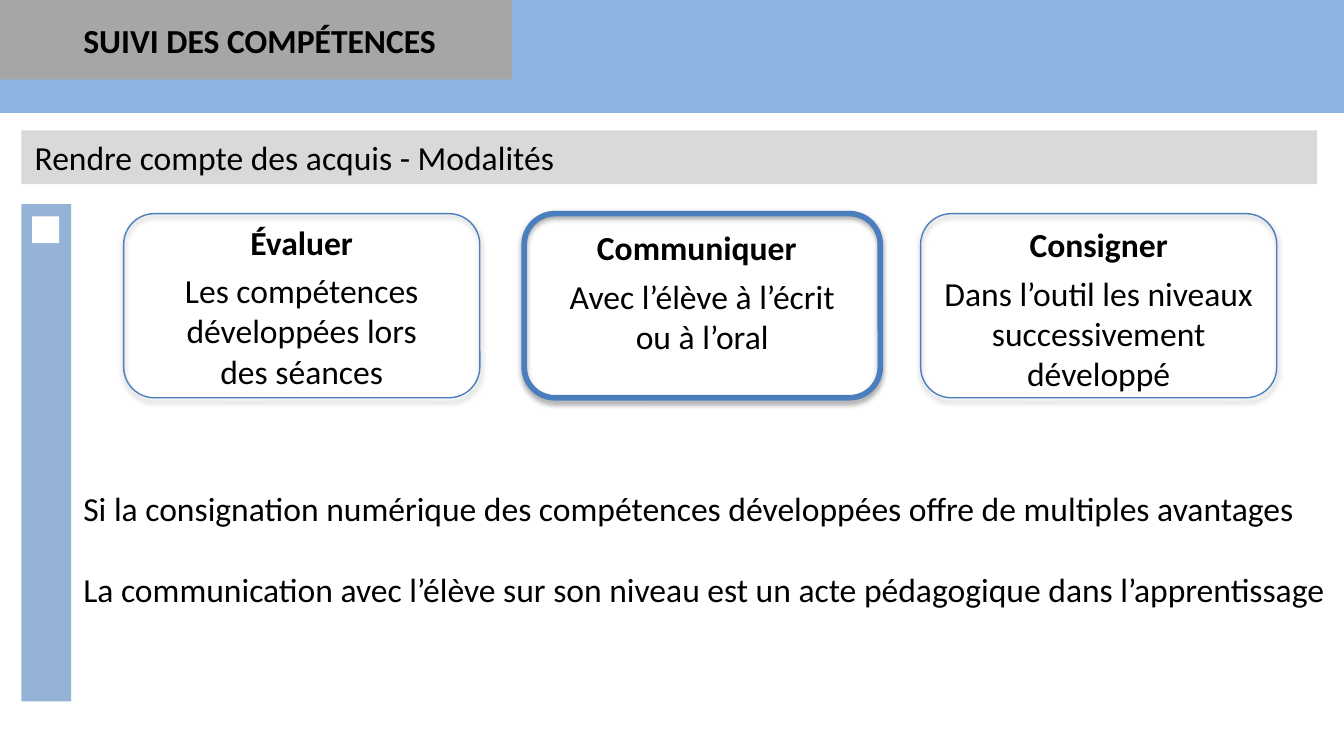
from lxml import etree
from pptx import Presentation
from pptx.dml.color import RGBColor
from pptx.enum.shapes import MSO_SHAPE as Shape
from pptx.enum.text import MSO_ANCHOR as Anchor, MSO_AUTO_SIZE as AutoSize, PP_ALIGN as Align
from pptx.oxml.ns import qn
from pptx.util import Inches, Pt

COLOURS = {
    "banner": "8EB4E3", "tab": "A6A6A6", "strip": "D9D9D9", "rail": "95B3D7",
    "outline": "4B7EBC", "text": "000000", "white": "FFFFFF",
}
FONT = "Calibri"
PAGE_WIDTH = 10
PAGE_HEIGHT = PAGE_WIDTH * 9 / 16
CARD_TOP, CARD_WIDTH, CARD_HEIGHT = 1.59, 2.65, 1.37
# left, heading, heading top in the card, heading width, shift, body, body width, line width
CARDS = [
    (6.85, "Consigner", 0.03, 1.44, 0, "Dans l’outil les niveaux successivement développé", 2.65, 0.75),
    (3.9, "Communiquer", 0.05, 1.84, -0.04, "Avec l’élève à l’écrit ou à l’oral", 2.28, 3),
    (0.92, "Évaluer", 0.01, 1.44, 0, "Les compétences développées lors des séances", 2.28, 0.75),
]
STATEMENTS = [
    "Si la consignation numérique des compétences développées offre de multiples avantages",
    "La communication avec l’élève sur son niveau est un acte pédagogique dans l’apprentissage",
]


def colour(name):
    return RGBColor.from_string(COLOURS[name])


def inches(*lengths):
    return [Inches(length) for length in lengths]


def add_block(page, box, fill):
    block = page.shapes.add_shape(Shape.RECTANGLE, *inches(*box))
    block.shadow.inherit = False
    block.fill.solid()
    block.fill.fore_color.rgb = colour(fill)
    block.line.fill.background()
    return block


def write(frame, lines, bold=False, align=Align.LEFT, wrap=True, gap=0):
    frame.word_wrap = wrap
    frame.auto_size = AutoSize.NONE
    frame.vertical_anchor = Anchor.TOP
    for index, line in enumerate(lines):
        para = frame.add_paragraph() if index else frame.paragraphs[0]
        para.alignment = align
        para.space_before = Pt(gap if index else 0)
        span = para.add_run()
        span.text = line
        span.font.name = FONT
        span.font.size = Pt(18)
        span.font.bold = bold
        span.font.color.rgb = colour("text")


def add_text(page, box, lines, **style):
    label = page.shapes.add_textbox(*inches(*box))
    write(label.text_frame, lines, **style)
    return label


def add_shadow(shape):
    effects = etree.SubElement(shape.element.spPr, qn("a:effectLst"))
    shadow = etree.SubElement(effects, qn("a:outerShdw"), blurRad=str(Pt(3.1)),
                              dist=str(Pt(1.6)), dir="5400000", rotWithShape="0")
    tint = etree.SubElement(shadow, qn("a:srgbClr"), val=COLOURS["text"])
    etree.SubElement(tint, qn("a:alpha"), val="38000")


def add_header(page, left, top, width, height):
    add_block(page, (left, top, width, height), "banner")
    add_block(page, (left, top, 3.81, 0.59), "tab")
    title = page.shapes.title
    title.left, title.top, title.width, title.height = inches(left + 0.52, top + 0.1, 2.85, 0.4)
    write(title.text_frame, ["SUIVI DES COMPÉTENCES"], bold=True, wrap=False)
    # The title stands in front of the tab
    page.shapes.element.append(title.element)


def add_rail(page, left, top, width, height):
    add_block(page, (left, top, width, height), "rail")
    add_block(page, (left + 0.08, top + 0.09, 0.2, 0.2), "white")


def add_card(page, left, top, width, height, heading, heading_top, heading_width, shift,
             body, body_width, weight):
    heading_left = left + (width - heading_width) / 2 + shift
    add_text(page, (heading_left, top + heading_top, heading_width, 0.4), [heading],
             bold=True, align=Align.CENTER)
    body_left = left + (width - body_width) / 2
    add_text(page, (body_left, top + heading_top + 0.36, body_width, 1.01), [body],
             align=Align.CENTER)
    frame = page.shapes.add_shape(Shape.ROUNDED_RECTANGLE, *inches(left, top, width, height))
    frame.fill.background()
    frame.line.color.rgb = colour("outline")
    frame.line.width = Pt(weight)
    add_shadow(frame)


def add_statements(page, *box):
    label = add_text(page, box, STATEMENTS, gap=22)
    frame = label.text_frame
    frame.margin_left = frame.margin_right = Inches(0.04)
    frame.margin_top = frame.margin_bottom = Inches(0.04)


def main():
    deck = Presentation()
    deck.slide_width, deck.slide_height = inches(PAGE_WIDTH, PAGE_HEIGHT)
    page = deck.slides.add_slide(deck.slide_layouts[5])

    # Header and subtitle strip
    add_header(page, 0, 0, PAGE_WIDTH, 0.84)
    strip = add_block(page, (0.16, 0.97, 9.64, 0.4), "strip")
    write(strip.text_frame, ["Rendre compte des acquis - Modalités"])

    # Statements, cards and side rail
    add_statements(page, 0.58, 3.59, 9.42, 0.99)
    for left, *content in CARDS:
        add_card(page, left, CARD_TOP, CARD_WIDTH, CARD_HEIGHT, *content)
    add_rail(page, 0.16, 1.52, 0.37, 3.7)

    deck.save("out.pptx")


if __name__ == "__main__":
    main()
